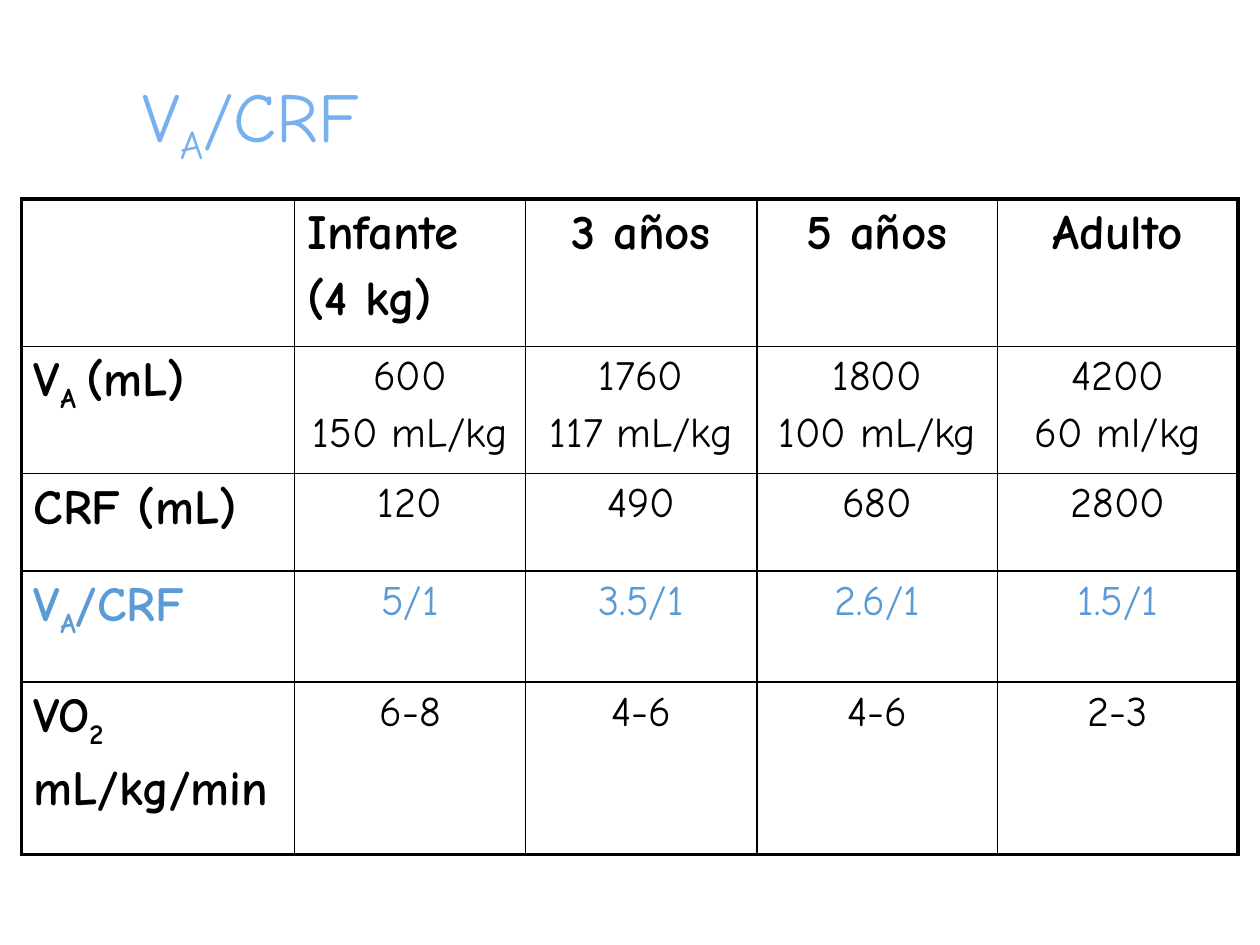
from lxml import etree
from pptx import Presentation
from pptx.dml.color import RGBColor
from pptx.enum.text import MSO_ANCHOR, PP_ALIGN
from pptx.oxml.ns import qn
from pptx.util import Cm, Pt

LEFT, MID = PP_ALIGN.LEFT, PP_ALIGN.CENTER
CENTER = MSO_ANCHOR.MIDDLE
FACE = "Comic Neue"
BLACK, WHITE, SKY, BLUE = "000000", "FFFFFF", "77B0F1", "5B9BD5"
THIN, THICK = 1, 2.25
COLS = [5.51, 4.65, 4.67, 4.85, 4.85]
ROWS = [2.97, 2.57, 1.96, 2.24, 3.48]
CELLS = [
    ["", "Infante\n(4 kg)", "3 años", "5 años", "Adulto"],
    ["V|A |(mL)", "600\n150 mL/kg", "1760\n117 mL/kg",
     "1800\n100 mL/kg", "4200\n60 ml/kg"],
    ["CRF (mL)", "120", "490", "680", "2800"],
    ["V|A|/CRF", "5/1", "3.5/1", "2.6/1", "1.5/1"],
    ["VO|2|\nmL/kg/min", "6-8", "4-6", "4-6", "2-3"],
]


def color(code):
    """Turn a hex string into a colour."""
    return RGBColor.from_string(code)


def assign(item, form):
    """Set attributes of an object from a dict."""
    for name, value in form.items():
        setattr(item, name, value)


def write(frame, text, size, tint, bold=False, align=LEFT):
    """Fill a frame; bars enclose subscripts and newlines part paragraphs."""
    for i, line in enumerate(text.split("\n")):
        para = frame.paragraphs[0] if i == 0 else frame.add_paragraph()
        para.alignment = align
        if i:
            para.space_before = Pt(0.2 * size)
        for j, part in enumerate(line.split("|")):
            if not part:
                continue
            run = para.add_run()
            run.text = part
            assign(run.font, {"name": FACE, "size": Pt(size), "bold": bold})
            run.font.color.rgb = color(tint)
            if j % 2:
                run.font._element.set("baseline", "-25000")


def border(cell, widths):
    """Draw the four sides of a cell, given widths by side letter."""
    props = cell._tc.get_or_add_tcPr()
    for side, width in widths.items():
        line = etree.SubElement(props, qn("a:ln" + side), w=str(Pt(width)))
        fill = etree.SubElement(line, qn("a:solidFill"))
        etree.SubElement(fill, qn("a:srgbClr"), val=BLACK)


def add_title(slide):
    """Add the slide heading."""
    box = slide.shapes.add_textbox(Cm(1.27), Cm(0.76), Cm(22.86), Cm(3.18))
    frame = box.text_frame
    assign(frame, {"word_wrap": True, "vertical_anchor": CENTER,
                   "margin_left": Cm(1.6)})
    write(frame, "V|A|/CRF", 40, SKY)
    frame.paragraphs[0].line_spacing = 0.9


def add_grid(slide):
    """Add the table of lung values by age."""
    rows, cols = len(ROWS), len(COLS)
    table = slide.shapes.add_table(rows, cols, Cm(0.43), Cm(4.01),
                                   Cm(sum(COLS)), Cm(sum(ROWS))).table
    assign(table, {"first_row": False, "horz_banding": False})
    for col, width in zip(table.columns, COLS):
        col.width = Cm(width)
    for row, height in zip(table.rows, ROWS):
        row.height = Cm(height)
    for r, texts in enumerate(CELLS):
        for c, text in enumerate(texts):
            cell = table.cell(r, c)
            edges = {"L": c == 0, "R": c == cols - 1,
                     "T": r == 0, "B": r == rows - 1}
            border(cell, {side: THICK if outer else THIN
                          for side, outer in edges.items()})
            cell.fill.solid()
            cell.fill.fore_color.rgb = color(WHITE)
            head = r == 0 or c == 0
            align = LEFT if c == 0 or (r, c) == (0, 1) else MID
            tint = BLUE if r == 3 else BLACK
            write(cell.text_frame, text, 28 if head else 24, tint, head, align)


def main():
    """Build and save the slide."""
    deck = Presentation()
    assign(deck, {"slide_width": Cm(25.4), "slide_height": Cm(19.05)})
    slide = deck.slides.add_slide(deck.slide_layouts[6])
    add_title(slide)
    add_grid(slide)
    deck.save("out.pptx")


if __name__ == "__main__":
    main()
